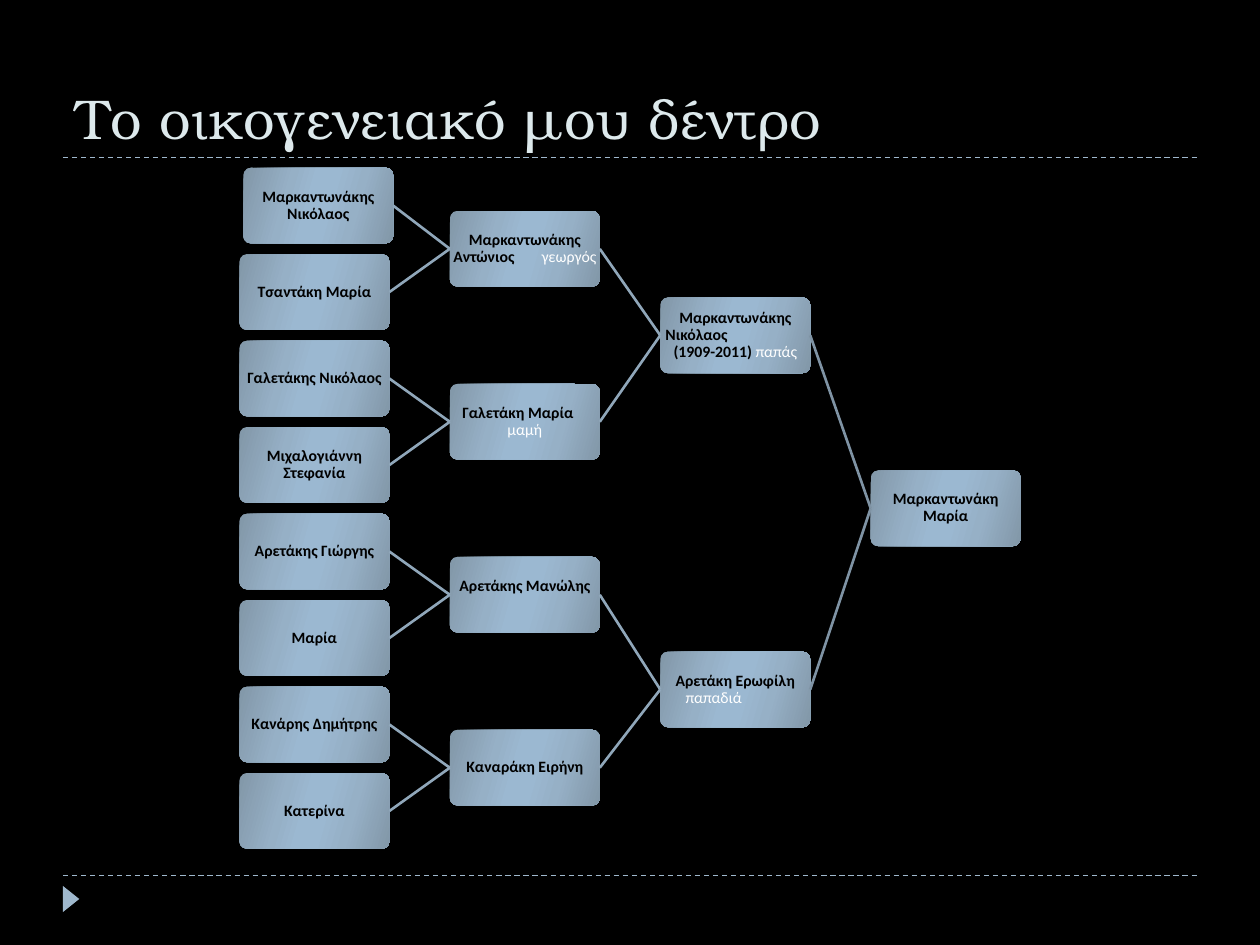
"""Build a slide with a four-generation family tree."""
from dataclasses import dataclass

from lxml.etree import SubElement
from pptx import Presentation
from pptx.dml.color import RGBColor as Rgb
from pptx.enum.dml import MSO_LINE_DASH_STYLE as Dash
from pptx.enum.shapes import MSO_CONNECTOR as Connector, MSO_SHAPE as Preset
from pptx.enum.text import MSO_ANCHOR as Anchor, MSO_AUTO_SIZE as AutoSize, PP_ALIGN as Align
from pptx.oxml.ns import qn
from pptx.shapes.autoshape import Shape
from pptx.shapes.connector import Connector as Line
from pptx.slide import Slide
from pptx.util import Pt

COLORS = {
    "background": "000000", "title": "DDE9EC", "accent": "9FB8CD",
    "name": "000000", "job": "FFFFFF",
    "edge": "8297A8", "middle": "96B0C6", "center": "9BB8D1",
    "branch": "90A7BA", "root_branch": "7F93A4",
}
GRADIENT = ((0, "edge"), (30, "middle"), (45, "center"),
            (55, "center"), (73, "middle"), (100, "edge"))
BOX_WIDTH, BOX_HEIGHT = 85.7, 43.2
TREE_LEFT, TREE_TOP = 136.8, 95.9
COLUMN_STEP, ROW_STEP = 120.25, 49.42
INSET = 0.7


@dataclass(frozen=True)
class TextLine:
    """One line of a box; an indent makes it left aligned."""
    name: str = ""
    job: str = ""
    indent: float | None = None
    tab: float | None = None


@dataclass(frozen=True)
class Person:
    """A relative, with the shift of the box from its regular place."""
    lines: tuple[TextLine, ...]
    shift_x: float = 0
    shift_y: float = 0
    bottom_inset: float = INSET


def named(name: str, **options: float) -> Person:
    """Return a person with one centred line."""
    return Person((TextLine(name),), **options)


GENERATIONS = (
    (named("Μαρκαντωνάκης Νικόλαος", shift_x=2.2), named("Τσαντάκη Μαρία"),
     named("Γαλετάκης Νικόλαος"), named("Μιχαλογιάννη Στεφανία"),
     named("Αρετάκης Γιώργης"), named("Μαρία"),
     named("Κανάρης Δημήτρης"), named("Κατερίνα")),
    (Person((TextLine("Μαρκαντωνάκης"),
             TextLine("Αντώνιος\t", "γεωργός", indent=0, tab=84))),
     Person((TextLine("Γαλετάκη Μαρία", indent=5.2), TextLine(job="μαμή"))),
     named("Αρετάκης Μανώλης", bottom_inset=10.5),
     named("Καναράκη Ειρήνη")),
    (Person((TextLine("Μαρκαντωνάκης"), TextLine("Νικόλαος", indent=1),
             TextLine("(1909-2011) ", "παπάς"))),
     Person((TextLine("Αρετάκη Ερωφίλη"), TextLine(job="παπαδιά", indent=12.5)),
            shift_y=4.7)),
    (named("Μαρκαντωνάκη Μαρία"),),
)


def rgb(key: str) -> Rgb:
    """Look up a colour by its role."""
    return Rgb.from_string(COLORS[key])


def fill_gradient(box: Shape) -> None:
    """Give a box its six-stop gradient."""
    box.fill.gradient()
    gradient = box._element.spPr.find(qn("a:gradFill"))
    for child in list(gradient):
        gradient.remove(child)
    stops = SubElement(gradient, qn("a:gsLst"))
    for percent, key in GRADIENT:
        stop = SubElement(stops, qn("a:gs"), pos=str(percent * 1000))
        SubElement(stop, qn("a:srgbClr"), val=COLORS[key])
    SubElement(gradient, qn("a:lin"), ang=str(16 * 60000), scaled="0")


def write_lines(box: Shape, person: Person) -> None:
    """Write the lines of a person into a box."""
    frame = box.text_frame
    frame.word_wrap = True
    frame.vertical_anchor = Anchor.MIDDLE
    frame.margin_left = frame.margin_right = frame.margin_top = Pt(INSET)
    frame.margin_bottom = Pt(person.bottom_inset)
    for index, line in enumerate(person.lines):
        para = frame.paragraphs[0] if index == 0 else frame.add_paragraph()
        para.line_spacing = 0.9
        para.alignment = Align.CENTER
        if line.indent is not None:
            para.alignment = Align.LEFT
            para._p.get_or_add_pPr().set("marL", str(Pt(line.indent)))
        if line.tab is not None:
            tabs = SubElement(para._p.get_or_add_pPr(), qn("a:tabLst"))
            SubElement(tabs, qn("a:tab"), pos=str(Pt(line.tab)), algn="r")
        for text, key in ((line.name, "name"), (line.job, "job")):
            if text:
                span = para.add_run()
                span.text = text
                span.font.name = "Calibri"
                span.font.size = Pt(9)
                span.font.bold = key == "name"
                span.font.color.rgb = rgb(key)


def add_person(slide: Slide, person: Person, level: int, index: int) -> Shape:
    """Place a box at the middle of the rows that its ancestors take."""
    row = (index + 0.5) * 2 ** level - 0.5
    left = TREE_LEFT + COLUMN_STEP * level + person.shift_x
    top = TREE_TOP + ROW_STEP * row + person.shift_y
    box = slide.shapes.add_shape(Preset.ROUNDED_RECTANGLE, Pt(left), Pt(top),
                                 Pt(BOX_WIDTH), Pt(BOX_HEIGHT))
    box.adjustments[0] = 0.1
    box.shadow.inherit = False
    box.line.fill.background()
    fill_gradient(box)
    write_lines(box, person)
    return box


def add_line(slide: Slide, key: str, width: float,
             left: float = 0, right: float = 0, height: float = 0) -> Line:
    """Add a level line without a shadow."""
    line = slide.shapes.add_connector(Connector.STRAIGHT, Pt(left), Pt(height),
                                      Pt(right), Pt(height))
    line.line.color.rgb = rgb(key)
    line.line.width = Pt(width)
    SubElement(line._element.spPr, qn("a:effectLst"))
    return line


def add_branch(slide: Slide, child: Shape, parent: Shape, key: str) -> None:
    """Join a child box to a parent box on its left."""
    branch = add_line(slide, key, 1.5)
    branch.begin_connect(child, 1)
    branch.end_connect(parent, 3)


def add_frame(slide: Slide) -> None:
    """Draw the dashed rules and the corner triangle."""
    for height in (90, 500.4):
        add_line(slide, "accent", 0.75, 36, 684, height).line.dash_style = Dash.DASH
    marker = slide.shapes.add_shape(Preset.ISOSCELES_TRIANGLE, Pt(33.1), Pt(509),
                                    Pt(15), Pt(9.4))
    marker.rotation = 90
    marker.shadow.inherit = False
    marker.fill.solid()
    marker.fill.fore_color.rgb = rgb("accent")
    marker.line.fill.background()


def add_title(slide: Slide, text: str) -> None:
    """Fill and place the title placeholder."""
    title = slide.shapes.title
    title.left, title.top, title.width, title.height = Pt(36), Pt(12.2), Pt(648), Pt(77.8)
    frame = title.text_frame
    frame.auto_size = AutoSize.NONE
    frame.vertical_anchor = Anchor.BOTTOM
    para = frame.paragraphs[0]
    para.alignment = Align.LEFT
    span = para.add_run()
    span.text = text
    span.font.name = "TeX Gyre Bonum"
    span.font.size = Pt(32)
    span.font.color.rgb = rgb("title")


def main() -> None:
    """Build and save the deck."""
    deck = Presentation()
    deck.slide_width, deck.slide_height = Pt(720), Pt(540)
    slide = deck.slides.add_slide(deck.slide_layouts[5])
    slide.background.fill.solid()
    slide.background.fill.fore_color.rgb = rgb("background")
    add_frame(slide)
    add_title(slide, "Το οικογενειακό μου δέντρο")
    parents: list[Shape] = []
    for level, people in enumerate(GENERATIONS):
        boxes = [add_person(slide, person, level, index)
                 for index, person in enumerate(people)]
        key = "root_branch" if len(boxes) == 1 else "branch"
        for index, parent in enumerate(parents):
            add_branch(slide, boxes[index // 2], parent, key)
        parents = boxes
    deck.save("out.pptx")


if __name__ == "__main__":
    main()
